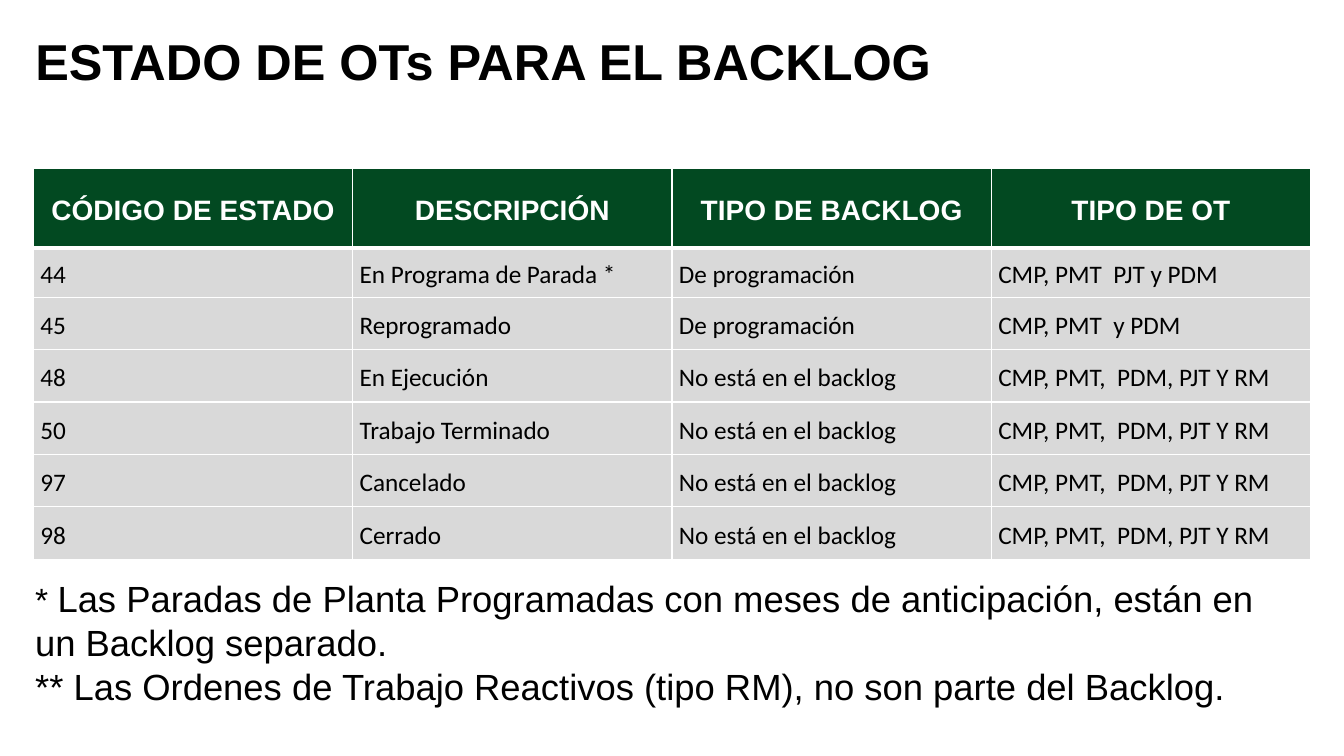
"""Build the slide on work order states for the backlog."""
import dataclasses
import typing

import pptx
import pptx.dml.color
import pptx.enum.text
import pptx.oxml
import pptx.oxml.ns
import pptx.util

Inches = pptx.util.Inches
Pt = pptx.util.Pt
COLORS = {"green": "024921", "gray": "D9D9D9", "white": "FFFFFF", "black": "000000"}
ALIGN = pptx.enum.text.PP_ALIGN
ANCHOR = pptx.enum.text.MSO_ANCHOR


@dataclasses.dataclass(frozen=True)
class Style:
    font: str
    size: float
    color: str
    bold: bool = False


@dataclasses.dataclass(frozen=True)
class Band:
    style: Style
    fill: str
    align: typing.Any
    base: float


@dataclasses.dataclass(frozen=True)
class State:
    code: str
    name: str
    kind: str
    orders: str


TITLE = Style("Arial", 36, "black", True)
STAR = Style("Arial", 24, "black")
NOTE = Style("Arial", 26, "black")
HEAD = Band(Style("Arial", 20, "white", True), "green", ALIGN.CENTER, 3)
BODY = Band(Style("Calibri", 18, "black"), "gray", ALIGN.LEFT, 1)

PLAN = "De programación"
NONE = "No está en el backlog"
ALL = "CMP, PMT,  PDM, PJT Y RM"
STATES = [
    State("CÓDIGO DE ESTADO", "DESCRIPCIÓN", "TIPO DE BACKLOG", "TIPO DE OT"),
    State("44", "En Programa de Parada *", PLAN, "CMP, PMT  PJT y PDM"),
    State("45", "Reprogramado", PLAN, "CMP, PMT  y PDM"),
    State("48", "En Ejecución", NONE, ALL),
    State("50", "Trabajo Terminado", NONE, ALL),
    State("97", "Cancelado", NONE, ALL),
    State("98", "Cerrado", NONE, ALL),
]
ROWS = [0.79, 0.49] + [0.52] * 5
NOTES = [
    [("* ", STAR), ("Las Paradas de Planta Programadas con meses de anticipación, "
                    "están en un Backlog separado.", NOTE)],
    [("** Las Ordenes de Trabajo Reactivos (tipo RM), no son parte del Backlog.", NOTE)],
]


def tint(name: str) -> pptx.dml.color.RGBColor:
    return pptx.dml.color.RGBColor.from_string(COLORS[name])


def write(para: typing.Any, text: str, style: Style) -> None:
    run = para.add_run()
    run.text = text
    run.font.name = style.font
    run.font.size = Pt(style.size)
    run.font.bold = style.bold
    run.font.color.rgb = tint(style.color)


def edge(cell: typing.Any, base: float) -> None:
    props = cell._tc.get_or_add_tcPr()
    space = pptx.oxml.ns.nsdecls("a")
    for spot, (side, width) in enumerate(zip("LRTB", (1, 1, 1, base))):
        props.insert(spot, pptx.oxml.parse_xml(
            f'<a:ln{side} {space} w="{Pt(width)}"><a:solidFill>'
            f'<a:srgbClr val="{COLORS["white"]}"/></a:solidFill></a:ln{side}>'))


def fill(cell: typing.Any, text: str, band: Band) -> None:
    cell.fill.solid()
    cell.fill.fore_color.rgb = tint(band.fill)
    cell.vertical_anchor = ANCHOR.MIDDLE
    cell.margin_left = cell.margin_right = Inches(0.07)
    cell.margin_top = cell.margin_bottom = 0
    para = cell.text_frame.paragraphs[0]
    para.alignment = band.align
    para.line_spacing = 1.15
    para.space_after = Pt(10)
    write(para, text, band.style)
    edge(cell, band.base)


def draw_title(slide: typing.Any) -> None:
    title = slide.shapes.title
    title.left, title.top = Inches(0.25), Inches(0.25)
    title.width, title.height = Inches(10.4), Inches(0.71)
    frame = title.text_frame
    frame.word_wrap = True
    frame.auto_size = pptx.enum.text.MSO_AUTO_SIZE.SHAPE_TO_FIT_TEXT
    frame.vertical_anchor = ANCHOR.TOP
    para = frame.paragraphs[0]
    para.alignment = ALIGN.LEFT
    write(para, "ESTADO DE OTs PARA EL BACKLOG", TITLE)


def draw_table(slide: typing.Any) -> None:
    grid = slide.shapes.add_table(
        len(STATES), 4, Inches(0.33), Inches(1.67), Inches(12.67), Inches(3.89)).table
    for row, high in zip(grid.rows, ROWS):
        row.height = Inches(high)
    for y, state in enumerate(STATES):
        for x, text in enumerate(dataclasses.astuple(state)):
            fill(grid.cell(y, x), text, BODY if y else HEAD)


def draw_notes(slide: typing.Any) -> None:
    box = slide.shapes.add_textbox(Inches(0.25), Inches(5.67), Inches(12.76), Inches(1.41))
    frame = box.text_frame
    frame.word_wrap = True
    frame.auto_size = pptx.enum.text.MSO_AUTO_SIZE.SHAPE_TO_FIT_TEXT
    for spot, runs in enumerate(NOTES):
        para = frame.add_paragraph() if spot else frame.paragraphs[0]
        for text, style in runs:
            write(para, text, style)


def main() -> None:
    deck = pptx.Presentation()
    deck.slide_width, deck.slide_height = Inches(13.33), Inches(7.5)
    slide = deck.slides.add_slide(deck.slide_layouts.get_by_name("Title Only"))
    draw_title(slide)
    draw_table(slide)
    draw_notes(slide)
    deck.save("out.pptx")


if __name__ == "__main__":
    main()
